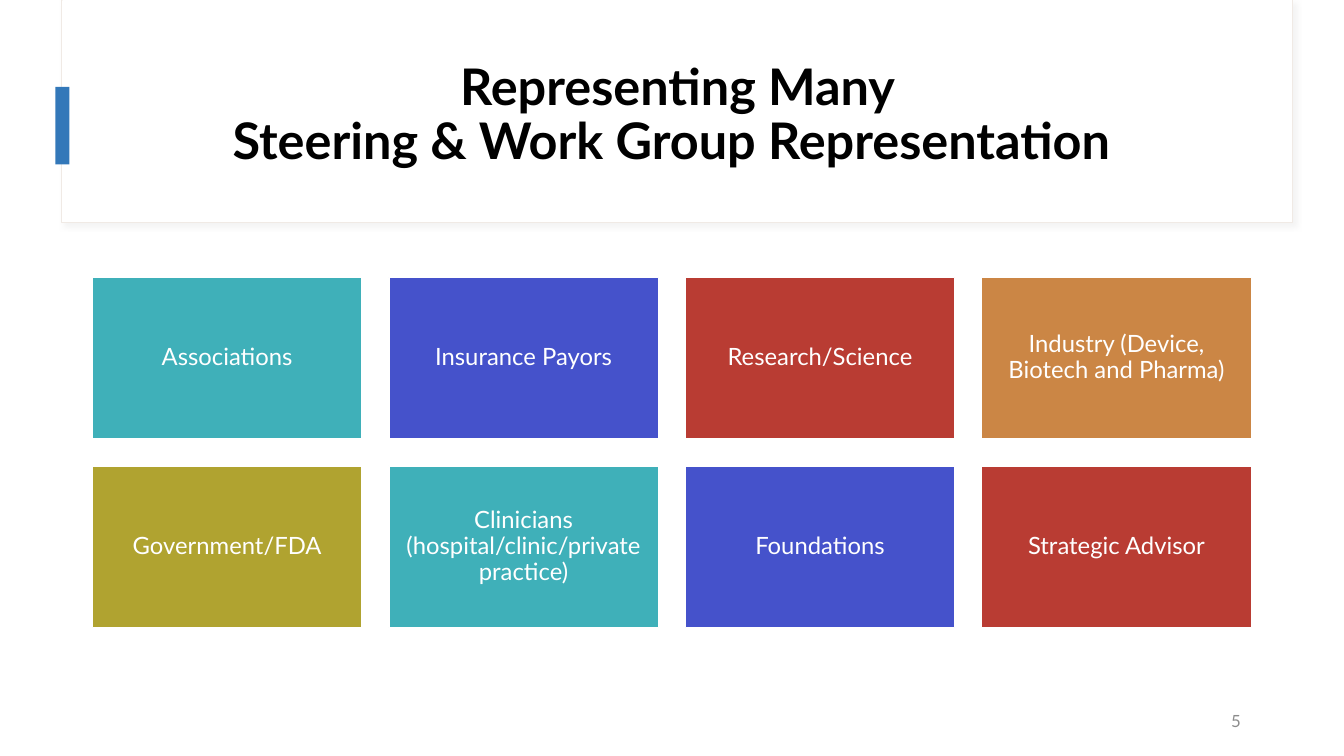
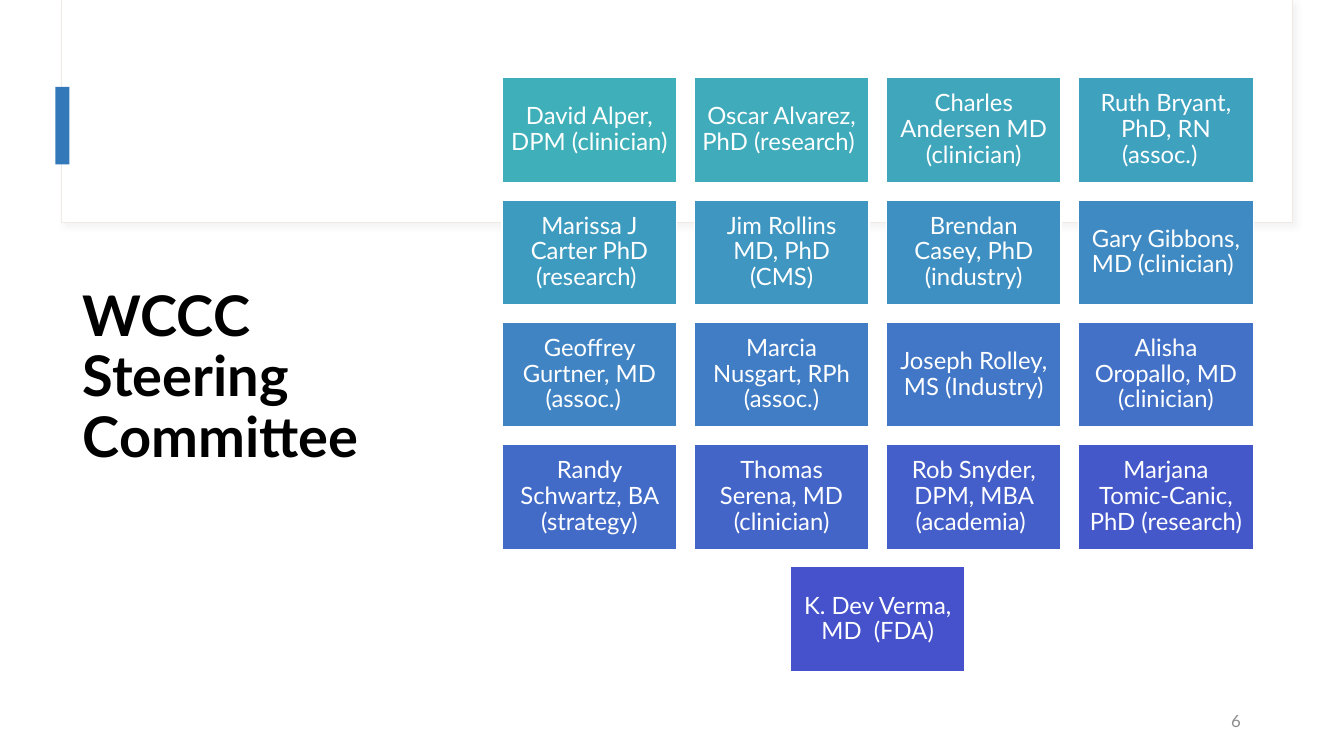
from colorsys import hls_to_rgb, rgb_to_hls

from lxml.etree import SubElement
from pptx import Presentation
from pptx.dml.color import RGBColor
from pptx.enum.shapes import MSO_SHAPE as Shape
from pptx.enum.text import MSO_ANCHOR as Anchor, MSO_AUTO_SIZE as AutoSize, PP_ALIGN as Align
from pptx.oxml.ns import qn
from pptx.util import Pt

FONT = "Lato"
COLORS = {
    "white": "FFFFFF",
    "black": "000000",
    "frame": "F0EAE5",
    "shadow": "D9D9D9",
    "accent": "3378B9",
    "number": "8C8C8C",
    "teal": "3FB0B9",
    "indigo": "4552CB",
    "red": "B93C33",
    "orange": "CB8645",
    "olive": "B0A330",
}
COLUMNS = 4
GAP_RATIO = 0.1
HEIGHT_RATIO = 0.6

GROUPS = [
    ("Associations", "teal"),
    ("Insurance Payors", "indigo"),
    ("Research/Science", "red"),
    ("Industry (Device, Biotech and Pharma)", "orange"),
    ("Government/FDA", "olive"),
    ("Clinicians (hospital/clinic/private practice)", "teal"),
    ("Foundations", "indigo"),
    ("Strategic Advisor", "red"),
]
MEMBERS = [
    "David Alper, DPM (clinician)",
    "Oscar Alvarez, PhD (research) ",
    "Charles Andersen MD (clinician)",
    "Ruth Bryant, PhD, RN (assoc.)  ",
    "Marissa J Carter PhD (research) ",
    "Jim Rollins MD, PhD (CMS)",
    "Brendan Casey, PhD (industry)",
    "Gary Gibbons, MD (clinician) ",
    "Geoffrey Gurtner, MD (assoc.)  ",
    "Marcia Nusgart, RPh (assoc.)",
    "Joseph Rolley, MS (Industry)",
    "Alisha Oropallo, MD (clinician)",
    "Randy Schwartz, BA (strategy)",
    "Thomas Serena, MD (clinician)",
    "Rob Snyder, DPM, MBA (academia) ",
    "Marjana Tomic-Canic, PhD (research)",
    "K. Dev Verma, MD  (FDA)",
]


def write_text(box, text, *, size, color, bold=False, align=Align.CENTER,
               anchor=Anchor.MIDDLE, spacing=0.9, inset=None):
    """Fill a shape with text, one paragraph for each line."""
    frame = box.text_frame
    frame.word_wrap = True
    frame.auto_size = AutoSize.NONE
    frame.vertical_anchor = anchor
    if inset is not None:
        frame.margin_left = frame.margin_right = Pt(inset)
        frame.margin_top = frame.margin_bottom = Pt(inset)
    frame.text = text
    for para in frame.paragraphs:
        para.alignment = align
        para.line_spacing = spacing
        for span in para.runs:
            span.font.name = FONT
            span.font.size = Pt(size)
            span.font.bold = bold
            span.font.color.rgb = RGBColor.from_string(color)


def add_rectangle(slide, left, top, width, height, fill, line=None, line_width=1):
    box = slide.shapes.add_shape(Shape.RECTANGLE, Pt(left), Pt(top), Pt(width), Pt(height))
    box.shadow.inherit = False
    box.fill.solid()
    box.fill.fore_color.rgb = RGBColor.from_string(fill)
    if line:
        box.line.color.rgb = RGBColor.from_string(line)
        box.line.width = Pt(line_width)
    else:
        box.line.fill.background()
    return box


def add_soft_shadow(box):
    effects = box.element.spPr.find(qn("a:effectLst"))
    shadow = SubElement(effects, qn("a:outerShdw"), blurRad=str(Pt(4)), dist=str(Pt(3)),
                        dir=str(45 * 60000), algn="tl", rotWithShape="0")
    color = SubElement(shadow, qn("a:srgbClr"), val=COLORS["shadow"])
    SubElement(color, qn("a:alpha"), val="30000")


def decorate_layout(layout, slide):
    """Draw the title frame and accent on a slide, then move them behind the layout's content."""
    frame = add_rectangle(slide, 44, 0, 879, 159, COLORS["white"], COLORS["frame"], 0.75)
    add_soft_shadow(frame)
    panel = add_rectangle(slide, 44.6, 0, 878.2, 158.4, COLORS["white"])
    accent = add_rectangle(slide, 39.5, 62, 10, 55.4, COLORS["accent"])
    for position, box in enumerate((frame, panel, accent), start=2):
        layout.shapes.element.insert(position, box.element)


def set_title(slide, text, left, top, width, height, **text_format):
    title = slide.shapes.title
    title.left, title.top, title.width, title.height = map(Pt, (left, top, width, height))
    write_text(title, text, color=COLORS["black"], bold=True, **text_format)


def add_page_number(slide, number):
    box = slide.shapes.add_textbox(Pt(698), Pt(500.5), Pt(195.5), Pt(28.75))
    write_text(box, str(number), size=12, color=COLORS["number"], align=Align.RIGHT, spacing=1)


def add_tiles(slide, tiles, left, top, width):
    """Lay out (label, fill) tiles in rows; a short last row is centred."""
    gap = width * GAP_RATIO
    height = width * HEIGHT_RATIO
    for index, (label, fill) in enumerate(tiles):
        row, column = divmod(index, COLUMNS)
        in_row = min(COLUMNS, len(tiles) - row * COLUMNS)
        column += (COLUMNS - in_row) / 2
        tile = add_rectangle(slide, left + column * (width + gap), top + row * (height + gap),
                             width, height, fill, COLORS["white"])
        write_text(tile, label, size=17, color=COLORS["white"], inset=5.1)


def blend_hues(first, last, count):
    """Return count hex colours evenly spaced in hue, lightness and saturation."""
    start, end = (rgb_to_hls(*(channel / 255 for channel in RGBColor.from_string(color)))
                  for color in (first, last))
    blend = []
    for step in range(count):
        share = step / (count - 1)
        mixed = [a + (b - a) * share for a, b in zip(start, end)]
        blend.append(str(RGBColor(*(round(channel * 255) for channel in hls_to_rgb(*mixed)))))
    return blend


def main():
    deck = Presentation()
    deck.slide_width, deck.slide_height = Pt(960), Pt(540)
    layout = deck.slide_layouts.get_by_name("Title Only")

    groups = deck.slides.add_slide(layout)
    decorate_layout(layout, groups)
    set_title(groups, " Representing Many\nSteering & Work Group Representation",
              66, 45.4, 827.3, 80, size=36, anchor=Anchor.BOTTOM)
    add_page_number(groups, 5)
    add_tiles(groups, [(label, COLORS[name]) for label, name in GROUPS], 66, 198, 192.5)

    committee = deck.slides.add_slide(layout)
    set_title(committee, "WCCC\nSteering Committee", 52, 75.6, 266.4, 389.5,
              size=40, align=Align.LEFT)
    add_page_number(committee, 6)
    fills = blend_hues(COLORS["teal"], COLORS["indigo"], len(MEMBERS))
    add_tiles(committee, list(zip(MEMBERS, fills)), 358.6, 55.4, 124.8)

    deck.save("out.pptx")


if __name__ == "__main__":
    main()
